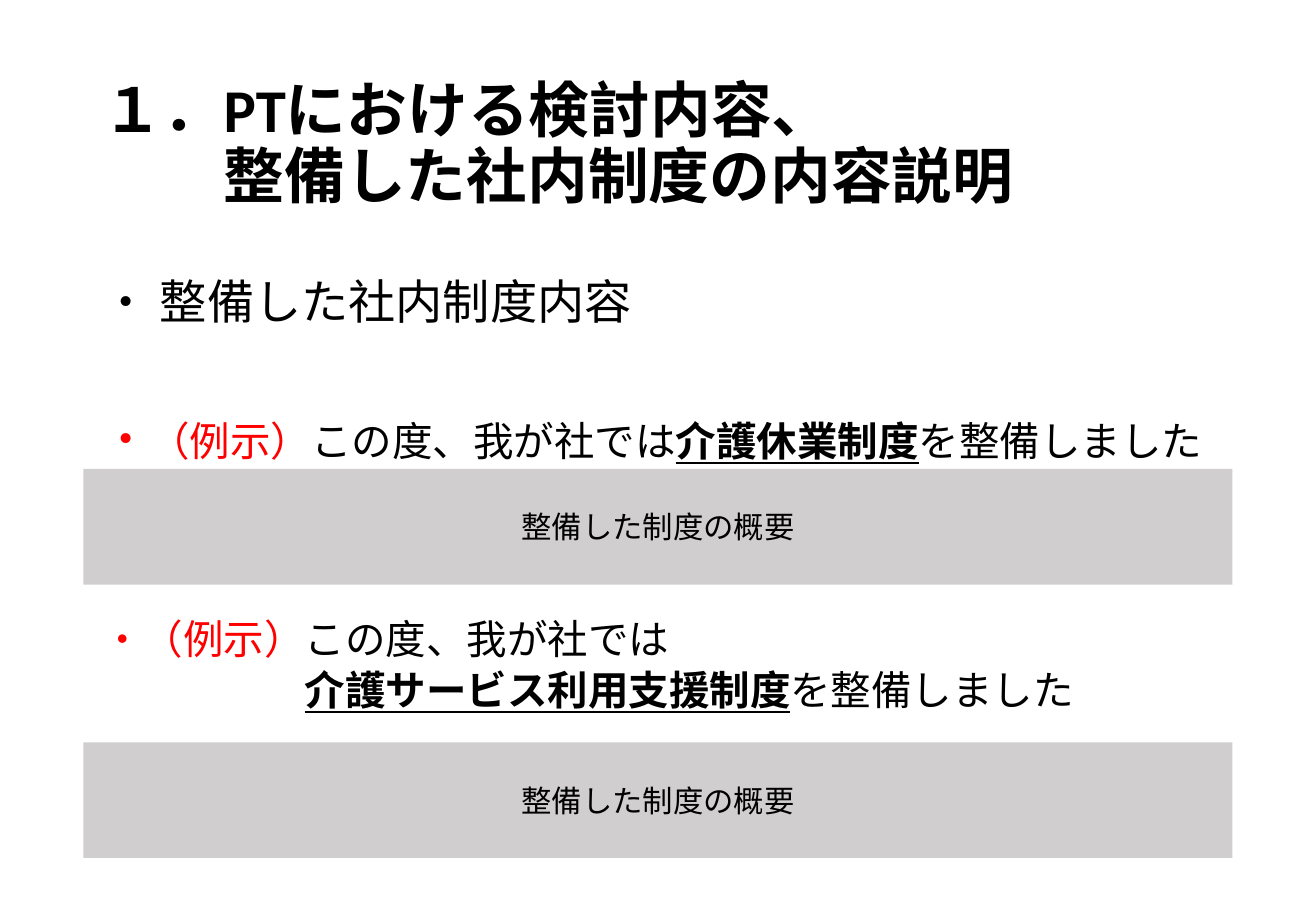
from pptx import Presentation
from pptx.dml.color import RGBColor
from pptx.enum.shapes import MSO_SHAPE
from pptx.enum.text import MSO_ANCHOR, PP_ALIGN
from pptx.util import Pt

FONT = "Calibri"
COLORS = {"text": "000000", "example": "FF0000", "band": "D0CECE"}
EMPHASIS = {"bold": True, "underline": True}
EXAMPLE = {"color": "example"}

# Each paragraph is a list of (text, format) spans.
TITLE = [
    [("１．PTにおける検討内容、", {})],
    [("整備した社内制度の内容説明", {})],
]
HEADING = [[("・ 整備した社内制度内容", {})]]
LEAVE = [[
    ("・", {"color": "example", "size": 28}),
    ("（例示）", EXAMPLE),
    ("この度、我が社では", {}),
    ("介護休業制度", EMPHASIS),
    ("を整備しました", {}),
]]
SUPPORT = [
    [("・（例示）", EXAMPLE), ("この度、我が社では", {})],
    [("介護サービス利用支援制度", EMPHASIS), ("を整備しました", {})],
]
SUMMARY = [[("整備した制度の概要", {})]]

PAGE_WIDTH, PAGE_HEIGHT = 780, 540
TEXT_LEFT, TEXT_WIDTH = 53.5, 672.5
BAND_LEFT, BAND_WIDTH, BAND_HEIGHT = 49.5, 681, 68.5
BAND_TOPS = (278, 440)


def write(shape, paragraphs, size, color="text", bold=False, spacing=0.9,
          align=PP_ALIGN.LEFT, anchor=MSO_ANCHOR.TOP, indent=0, gap=0):
    """Fill a shape; indent and gap apply to the paragraphs after the first."""
    frame = shape.text_frame
    frame.word_wrap = True
    frame.vertical_anchor = anchor
    for index, spans in enumerate(paragraphs):
        para = frame.paragraphs[0] if index == 0 else frame.add_paragraph()
        para.alignment = align
        para.line_spacing = spacing
        if index:
            para.space_before = Pt(gap)
            para._p.get_or_add_pPr().set("marL", str(Pt(indent)))
        for text, style in spans:
            span = para.add_run()
            span.text = text
            font = span.font
            font.name = FONT
            font.size = Pt(style.get("size", size))
            font.bold = style.get("bold", bold)
            font.underline = style.get("underline", False)
            font.color.rgb = RGBColor.from_string(COLORS[style.get("color", color)])


def add_text(page, top, height, paragraphs, **style):
    box = page.shapes.add_textbox(Pt(TEXT_LEFT), Pt(top), Pt(TEXT_WIDTH), Pt(height))
    write(box, paragraphs, **style)


def add_band(page, top):
    band = page.shapes.add_shape(
        MSO_SHAPE.RECTANGLE, Pt(BAND_LEFT), Pt(top), Pt(BAND_WIDTH), Pt(BAND_HEIGHT))
    band.shadow.inherit = False
    band.fill.solid()
    band.fill.fore_color.rgb = RGBColor.from_string(COLORS["band"])
    band.line.fill.background()
    write(band, SUMMARY, size=18, spacing=1, align=PP_ALIGN.CENTER,
          anchor=MSO_ANCHOR.MIDDLE)


def main():
    deck = Presentation()
    deck.slide_width, deck.slide_height = Pt(PAGE_WIDTH), Pt(PAGE_HEIGHT)
    page = deck.slides.add_slide(deck.slide_layouts[6])
    add_text(page, 48, 77, TITLE, size=36, bold=True, indent=72,
             anchor=MSO_ANCHOR.MIDDLE)
    add_text(page, 161.5, 46, HEADING, size=28)
    add_text(page, 243, 35, LEAVE, size=24)
    add_text(page, 363.5, 72, SUPPORT, size=24, indent=120, gap=4.5)
    for top in BAND_TOPS:
        add_band(page, top)
    deck.save("out.pptx")


if __name__ == "__main__":
    main()
